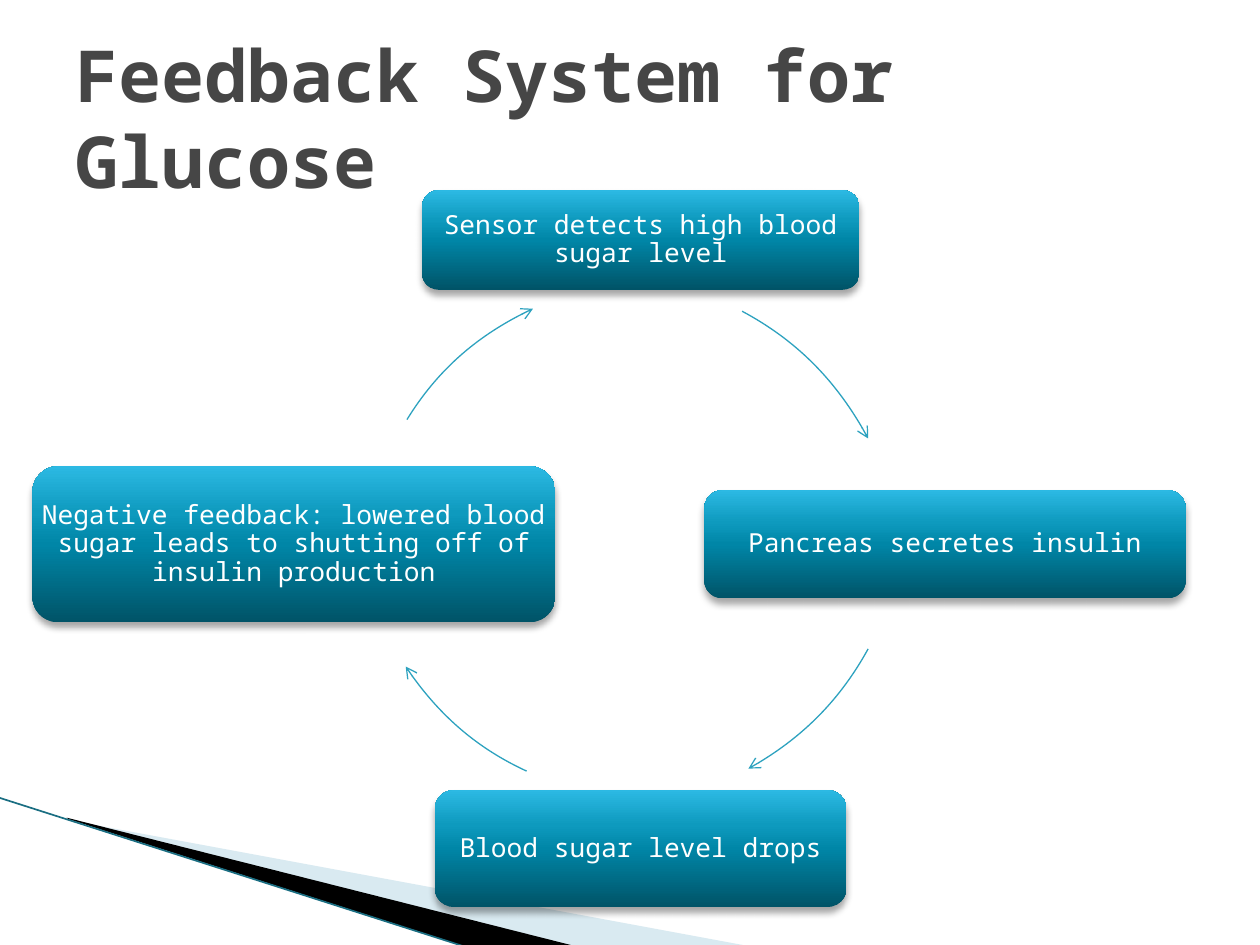
from lxml.etree import SubElement as Sub
from pptx import Presentation
from pptx.dml.color import RGBColor as Rgb
from pptx.enum.shapes import MSO_CONNECTOR as Line, MSO_SHAPE as Form
from pptx.enum.text import MSO_ANCHOR as Anchor, PP_ALIGN as Align
from pptx.oxml.ns import qn
from pptx.util import Inches, Pt

TITLE = "Feedback System for Glucose"
STEPS = [
    ("Sensor detects high blood sugar level", (0, -1), (3.47, 0.79)),
    ("Pancreas secretes insulin", (1, 0), (3.82, 0.86)),
    ("Blood sugar level drops", (0, 1), (3.27, 0.93)),
    ("Negative feedback: lowered blood sugar leads to shutting off of "
     "insulin production", (-1.14, 0), (4.15, 1.24)),
]
RING = 4.82
ARCS = [
    ((2.35, 2.19), [(5.89, 2.47), (6.32, 2.7), (6.66, 3.05), (6.89, 3.48)]),
    ((2.36, 1.57), [(6.89, 5.15), (6.67, 5.55), (6.34, 5.88), (5.94, 6.1)]),
    ((2.82, 1.54), [(4.18, 6.12), (3.79, 5.94), (3.46, 5.65), (3.22, 5.29)]),
    ((2.84, 2.22), [(3.23, 3.33), (3.47, 2.94), (3.82, 2.64), (4.23, 2.45)]),
]
WEDGES = [
    ((0.78, 5.47, 4.16, 1.58),
     [(0.55, 6.51), (5.95, 7.51), (4.56, 7.51), (0.55, 6.5)], "A0CBDC", 40),
    ((-0.06, 6.33, 4.16, 0.92),
     [(0.53, 6.49), (4.57, 7.51), (3.72, 7.52), (0.54, 6.5)], "000000", 100),
]
THEME = {
    "face": "Noto Sans Mono",
    "title": {"size": Pt(41), "bold": True, "ink": "464646"},
    "step": {"size": Pt(15), "bold": False, "ink": "FFFFFF"},
    "fade": [(0, "005367"), (50, "0086A7"), (70, "0E9ABE"), (100, "2CB9E3")],
    "arc": ("2DA2BF", 0.75),
    "edge": ("1A6E82", 0.95),
    "shade": ("000000", 35),
}
WIDE, HIGH = 10, 7.5
HUB = (WIDE * 0.5085, HIGH * 0.576)
REACH = HIGH * 0.322


def tint(node, code, share):
    hue = Sub(node, qn("a:srgbClr"), val=code)
    if share < 100:
        Sub(hue, qn("a:alpha"), val=str(share * 1000))


def write(shape, text, look, **frame):
    box = shape.text_frame
    for key, val in {"word_wrap": True, "vertical_anchor": Anchor.MIDDLE, **frame}.items():
        setattr(box, key, val)
    para = box.paragraphs[0]
    run = para.add_run()
    run.text = text
    for key in ("size", "bold"):
        setattr(run.font, key, look[key])
    run.font.name = THEME["face"]
    run.font.color.rgb = Rgb.from_string(look["ink"])
    return para


def stroke(shape, look):
    shape.line.color.rgb = Rgb.from_string(look[0])
    shape.line.width = Pt(look[1])


def trace(slide, frame, spots, curve):
    pen = slide.shapes.build_freeform(*map(Inches, spots[0]), scale=1)
    pen.add_line_segments([tuple(map(Inches, s)) for s in spots[1:]], close=False)
    shape = pen.convert_to_shape()
    shape.shadow.inherit = False
    for key, val in zip(("left", "top", "width", "height"), frame):
        setattr(shape, key, Inches(val))
    road = shape._element.spPr.find(".//" + qn("a:path"))
    for kid in list(road):
        road.remove(kid)
    road.set("w", str(shape.width))
    road.set("h", str(shape.height))
    groups = [("a:moveTo", spots[:1])]
    if curve:
        groups.append(("a:cubicBezTo", spots[1:]))
    else:
        groups += [("a:lnTo", [s]) for s in spots[1:]] + [("a:close", [])]
    for tag, part in groups:
        node = Sub(road, qn(tag))
        for x, y in part:
            Sub(node, qn("a:pt"), x=str(Inches(x) - shape.left),
                y=str(Inches(y) - shape.top))
    return shape


def wedge(slide, frame, spots, code, share):
    shape = trace(slide, frame, spots, False)
    shape.line.fill.background()
    shape.fill.solid()
    shape.fill.fore_color.rgb = Rgb.from_string(code)
    if share < 100:
        hue = shape._element.spPr.find(qn("a:solidFill")).find(qn("a:srgbClr"))
        Sub(hue, qn("a:alpha"), val=str(share * 1000))


def arrow(slide, place, spots):
    shape = trace(slide, (*place, RING, RING), spots, True)
    shape.fill.background()
    stroke(shape, THEME["arc"])
    Sub(shape._element.spPr.find(qn("a:ln")), qn("a:tailEnd"), type="arrow")


def step(slide, text, way, size):
    place = [h + REACH * d - s / 2 for h, d, s in zip(HUB, way, size)]
    shape = slide.shapes.add_shape(Form.ROUNDED_RECTANGLE, *map(Inches, (*place, *size)))
    shape.shadow.inherit = False
    shape.line.fill.background()
    shape.fill.gradient()
    grad = shape._element.spPr.find(qn("a:gradFill"))
    for kid in list(grad):
        grad.remove(kid)
    stops = Sub(grad, qn("a:gsLst"))
    for pos, code in THEME["fade"]:
        tint(Sub(stops, qn("a:gs"), pos=str(pos * 1000)), code, 100)
    Sub(grad, qn("a:lin"), ang="16200000", scaled="0")
    glow = Sub(shape._element.spPr.find(qn("a:effectLst")), qn("a:outerShdw"),
               blurRad=str(Pt(4)), dist=str(Pt(3)), dir="5400000", rotWithShape="0")
    tint(glow, *THEME["shade"])
    para = write(shape, text, THEME["step"], margin_left=0, margin_right=0,
                 margin_top=Inches(0.06), margin_bottom=Inches(0.06))
    para.alignment = Align.CENTER
    para.line_spacing = 0.9


def main():
    deck = Presentation()
    deck.slide_width, deck.slide_height = Inches(WIDE), Inches(HIGH)
    slide = deck.slides.add_slide(deck.slide_layouts[6])
    for item in WEDGES:
        wedge(slide, *item)
    edge = slide.shapes.add_connector(
        Line.STRAIGHT, *map(Inches, (-0.01, 6.33, 3.71, 7.52)))
    stroke(edge, THEME["edge"])
    Sub(edge._element.spPr, qn("a:effectLst"))
    for item, arc in zip(STEPS, ARCS):
        step(slide, *item)
        arrow(slide, *arc)
    head = slide.shapes.add_textbox(
        *map(Inches, (WIDE * 0.05, HIGH * 0.04, WIDE * 0.9, HIGH / 6)))
    write(head, TITLE, THEME["title"])
    deck.save("out.pptx")


if __name__ == "__main__":
    main()
